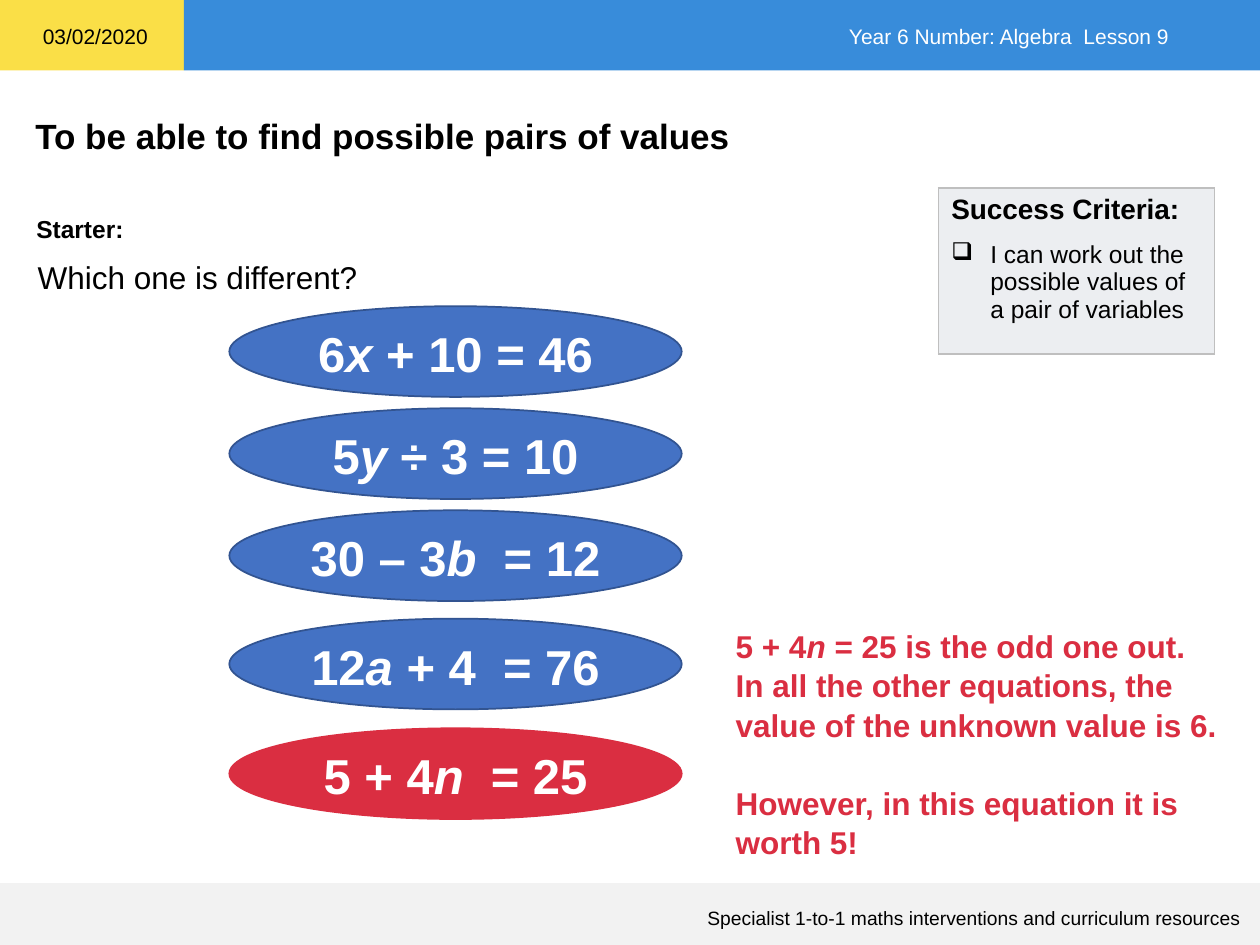
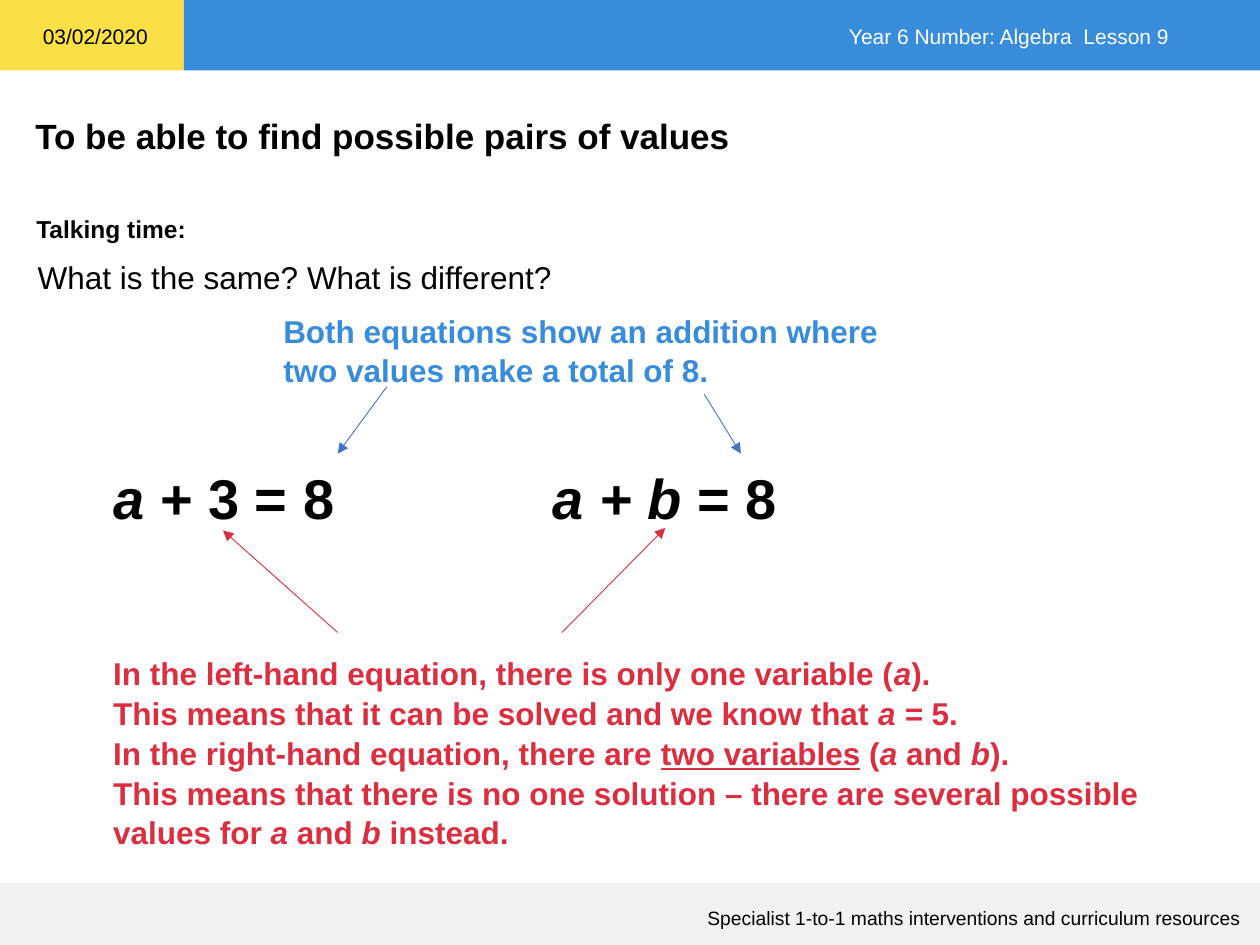
from lxml.etree import SubElement
from pptx import Presentation
from pptx.dml.color import RGBColor
from pptx.enum.shapes import MSO_CONNECTOR, MSO_SHAPE
from pptx.enum.text import MSO_ANCHOR, MSO_AUTO_SIZE, PP_ALIGN
from pptx.oxml.ns import qn
from pptx.util import Inches, Pt

BLACK = RGBColor(0x00, 0x00, 0x00)
WHITE = RGBColor(0xFF, 0xFF, 0xFF)
YELLOW = RGBColor(0xFA, 0xDF, 0x47)
SKY = RGBColor(0x38, 0x8C, 0xDA)
BLUE = RGBColor(0x44, 0x72, 0xC4)
NAVY = RGBColor(0x32, 0x54, 0x91)
RED = RGBColor(0xDA, 0x2E, 0x41)
PALE = RGBColor(0xF2, 0xF2, 0xF2)
MIST = RGBColor(0xEC, 0xEE, 0xF1)
GREY = RGBColor(0xBF, 0xBF, 0xBF)
FONT = "Arial"


class Deck:
    def __init__(self):
        self.prs = Presentation()
        self.prs.slide_width = Inches(10)
        self.prs.slide_height = Inches(7.5)
        self.slide = None

    def style(self, para, text, size, color=BLACK, bold=False,
              align=PP_ALIGN.LEFT, lead=1.05):
        """Put text into a paragraph: *italic*, _underlined_."""
        for i, part in enumerate(text.split("*")):
            for j, piece in enumerate(part.split("_")):
                if piece:
                    run = para.add_run()
                    run.text = piece
                    if i % 2:
                        run.font.italic = True
                    if j % 2:
                        run.font.underline = True
        para.alignment = align
        para.line_spacing = lead
        font = para.font
        font.name, font.size, font.bold = FONT, Pt(size), bold
        font.color.rgb = color

    def lines(self, frame, texts, size, **look):
        for i, text in enumerate(texts):
            para = frame.add_paragraph() if i else frame.paragraphs[0]
            self.style(para, text, size, **look)

    def text(self, left, top, width, height, texts, size, **look):
        box = self.slide.shapes.add_textbox(
            Inches(left), Inches(top), Inches(width), Inches(height))
        box.text_frame.word_wrap = True
        self.lines(box.text_frame, texts, size, **look)
        return box.text_frame

    def shape(self, kind, left, top, width, height, fill, text, size,
              line=None, **look):
        item = self.slide.shapes.add_shape(
            kind, Inches(left), Inches(top), Inches(width), Inches(height))
        item.shadow.inherit = False
        item.fill.solid()
        item.fill.fore_color.rgb = fill
        if line is None:
            item.line.fill.background()
        else:
            item.line.color.rgb = line
            item.line.width = Pt(1)
        frame = item.text_frame
        frame.vertical_anchor = MSO_ANCHOR.MIDDLE
        self.lines(frame, [text], size, **look)
        return frame

    def oval(self, top, text, fill=BLUE, line=NAVY):
        self.shape(MSO_SHAPE.OVAL, 1.82, top, 3.59, 0.72, fill, text, 28,
                   line=line, color=WHITE, bold=True, align=PP_ALIGN.CENTER)

    def arrow(self, start, end, color):
        link = self.slide.shapes.add_connector(
            MSO_CONNECTOR.STRAIGHT, *map(Inches, start + end))
        link.line.color.rgb = color
        link.line.width = Pt(0.5)
        props = link._element.spPr
        SubElement(props.find(qn("a:ln")), qn("a:tailEnd"), type="triangle")
        SubElement(props, qn("a:effectLst"))

    def goals(self, head, goal):
        """Add the one-cell table of success criteria."""
        table = self.slide.shapes.add_table(
            1, 1, Inches(7.45), Inches(1.49), Inches(2.19), Inches(1.32)).table
        table.first_row = table.horz_banding = False
        cell = table.cell(0, 0)
        props = cell._tc.get_or_add_tcPr()
        for side in ("lnL", "lnR", "lnT", "lnB"):
            edge = SubElement(props, qn(f"a:{side}"), w=str(Pt(1)))
            solid = SubElement(edge, qn("a:solidFill"))
            SubElement(solid, qn("a:srgbClr"), val=str(GREY))
        cell.fill.solid()
        cell.fill.fore_color.rgb = MIST
        frame = cell.text_frame
        self.lines(frame, [head], 16, bold=True, lead=1.0)
        para = frame.add_paragraph()
        mark = para._p.get_or_add_pPr()
        mark.set("marL", str(Inches(0.31)))
        mark.set("indent", str(-Inches(0.31)))
        SubElement(mark, qn("a:buChar"), char="❑")
        self.style(para, goal, 14, lead=1.0)
        para.space_before = Pt(9)

    def page(self, label, prompt):
        """Start a slide with the bands, title, label and question."""
        self.slide = self.prs.slides.add_slide(self.prs.slide_layouts[5])
        box = MSO_SHAPE.RECTANGLE
        date = self.shape(box, 0, 0, 1.46, 0.56, YELLOW, "03/02/2020", 12)
        date.margin_left = Inches(0.34)
        unit = self.shape(box, 1.46, 0, 8.54, 0.56, SKY,
                          "Year 6 Number: Algebra  Lesson 9", 12,
                          color=WHITE, align=PP_ALIGN.RIGHT)
        unit.margin_right = Inches(0.72)
        foot = self.shape(
            box, 0, 7.01, 10, 0.49, PALE,
            "Specialist 1-to-1 maths interventions and curriculum resources",
            11, align=PP_ALIGN.RIGHT)
        foot.margin_right = Inches(0.15)
        foot.margin_top = Inches(0.1)

        title = self.slide.shapes.title
        title.left, title.top = Inches(0.18), Inches(0.84)
        title.width, title.height = Inches(9.77), Inches(0.44)
        frame = title.text_frame
        frame.auto_size = MSO_AUTO_SIZE.NONE
        frame.vertical_anchor = MSO_ANCHOR.TOP
        self.lines(frame, ["To be able to find possible pairs of values"],
                   20, bold=True)
        self.text(0.19, 1.64, 3, 0.34, [label], 14, bold=True)
        self.text(0.2, 1.98, 9.5, 0.4, [prompt], 18)


def starter(deck):
    deck.page("Starter:", "Which one is different?")
    sums = ((2.43, "6*x* + 10 = 46"), (3.24, "5*y* ÷ 3 = 10"),
            (4.05, "30 – 3*b*  = 12"), (4.91, "12*a* + 4  = 76"))
    for top, text in sums:
        deck.oval(top, text)
    deck.oval(5.78, "5 + 4*n*  = 25", RED, RED)
    note = deck.text(5.74, 4.91, 4.16, 1.92, [
        "5 + 4*n* = 25 is the odd one out.",
        "In all the other equations, the value of the unknown value is 6.",
        "However, in this equation it is worth 5!",
    ], 18, color=RED, bold=True)
    note.paragraphs[-1].space_before = Pt(21.6)
    deck.goals("Success Criteria:",
               "I can work out the possible values of a pair of variables")


def talk(deck):
    deck.page("Talking time:", "What is the same? What is different?")
    for left, text in ((0.8, "*a + *3 = 8"), (4.29, "*a + b* = 8")):
        deck.text(left, 3.6, 3, 0.64, [text], 32, bold=True)
    deck.text(2.15, 2.41, 5.2, 0.71, [
        "Both equations show an addition where",
        "two values make a total of 8.",
    ], 18, color=SKY, bold=True)
    deck.text(0.8, 5.13, 8.44, 1.62, [
        "In the left-hand equation, there is only one variable (*a*).",
        "This means that it can be solved and we know that *a = *5.",
        "In the right-hand equation, there are _two variables_ (*a* and *b*).",
        "This means that there is no one solution – there are several "
        "possible values for *a* and *b* instead.",
    ], 18, color=RED, bold=True)
    for start, end, color in (
            ((3.07, 3.07), (2.68, 3.6), BLUE),
            ((5.59, 3.13), (5.88, 3.6), BLUE),
            ((2.68, 5.02), (1.77, 4.21), RED),
            ((4.46, 5.02), (5.28, 4.19), RED)):
        deck.arrow(start, end, color)


def main():
    deck = Deck()
    starter(deck)
    talk(deck)
    deck.prs.save("out.pptx")


if __name__ == "__main__":
    main()
